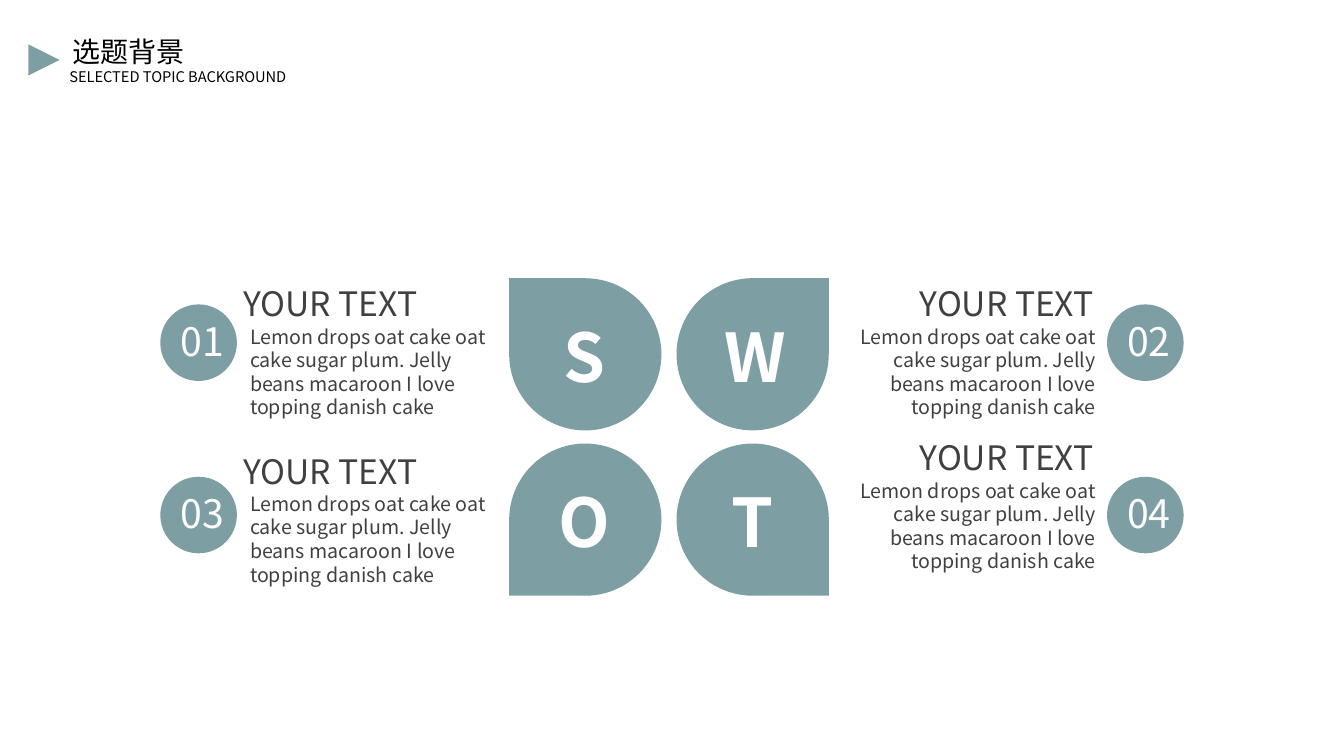
from pptx import Presentation
from pptx.dml.color import RGBColor
from pptx.enum.shapes import MSO_SHAPE
from pptx.enum.text import MSO_ANCHOR, PP_ALIGN
from pptx.util import Inches, Pt

TRIANGLE, TEARDROP, OVAL = MSO_SHAPE.ISOSCELES_TRIANGLE, MSO_SHAPE.TEAR, MSO_SHAPE.OVAL
LEFT, CENTER, RIGHT = PP_ALIGN.LEFT, PP_ALIGN.CENTER, PP_ALIGN.RIGHT
TOP = MSO_ANCHOR.TOP
FONT = "Noto Sans CJK SC"
TEAL, BLACK, GREY, WHITE = "7D9EA3", "000000", "404040", "FFFFFF"
BODY = ("Lemon drops oat cake oat cake sugar plum. Jelly beans macaroon "
        "I love topping danish cake")

presentation = Presentation()
presentation.slide_width, presentation.slide_height = Inches(13.33), Inches(7.5)
slide = presentation.slides.add_slide(presentation.slide_layouts[5])


def add_teal_shape(kind, left, top, size, rotation=0):
    shape = slide.shapes.add_shape(kind, Inches(left), Inches(top), Inches(size), Inches(size))
    shape.rotation = rotation
    shape.shadow.inherit = False
    shape.fill.solid()
    shape.fill.fore_color.rgb = RGBColor.from_string(TEAL)
    shape.line.fill.background()


def write(box, place, text, size, color, align=LEFT, bold=False, inset=True):
    box.left, box.top, box.width, box.height = [Inches(length) for length in place]
    frame = box.text_frame
    frame.word_wrap = True
    frame.vertical_anchor = TOP
    if not inset:
        frame.margin_left = frame.margin_top = frame.margin_right = frame.margin_bottom = 0
    paragraph = frame.paragraphs[0]
    paragraph.text = text
    paragraph.alignment = align
    font = paragraph.font
    font.name, font.size, font.bold = FONT, Pt(size), bold
    font.color.rgb = RGBColor.from_string(color)


add_teal_shape(TRIANGLE, 0.28, 0.44, 0.31, 90)
write(slide.shapes.title, (0.62, 0.29, 3.83, 0.44), "选题背景", 20, BLACK)
subtitle = slide.shapes.add_textbox(0, 0, 0, 0)
write(subtitle, (0.59, 0.62, 2.47, 0.28), "SELECTED TOPIC BACKGROUND", 10.5, BLACK)

petals = [("S", 0, 0, 270), ("W", 1, 0, 0), ("O", 0, 1, 180), ("T", 1, 1, 90)]
for letter, column, row, rotation in petals:
    left, top = 5.05 + 1.66 * column, 2.76 + 1.64 * row
    add_teal_shape(TEARDROP, left, top, 1.51, rotation)
    label = slide.shapes.add_textbox(0, 0, 0, 0)
    write(label, (left + 0.38, top + 0.32, 0.74, 0.91), letter, 48, WHITE, CENTER, True)

columns = [(1.59, 2.24, 2.48, LEFT, " YOUR TEXT"), (10.98, 8.79, 8.41, RIGHT, "YOUR TEXT ")]
heading_tops = [(2.76, 2.76), (4.42, 4.29)]
for row, tops in enumerate(heading_tops):
    circle_top = 3.02 + 1.71 * row
    for column, (circle_left, heading_left, body_left, align, heading_text) in enumerate(columns):
        top = tops[column]
        add_teal_shape(OVAL, circle_left, circle_top, 0.76)
        number = slide.shapes.add_textbox(0, 0, 0, 0)
        write(number, (circle_left + 0.1, circle_top + 0.08, 0.72, 0.57),
              f"{2 * row + column + 1:02}", 28, WHITE)
        heading = slide.shapes.add_textbox(0, 0, 0, 0)
        write(heading, (heading_left, top, 2.23, 0.5), heading_text, 24, GREY, align)
        body = slide.shapes.add_textbox(0, 0, 0, 0)
        write(body, (body_left, top + 0.46, 2.46, 1.07), BODY, 14, GREY, align, inset=False)

presentation.save("out.pptx")
